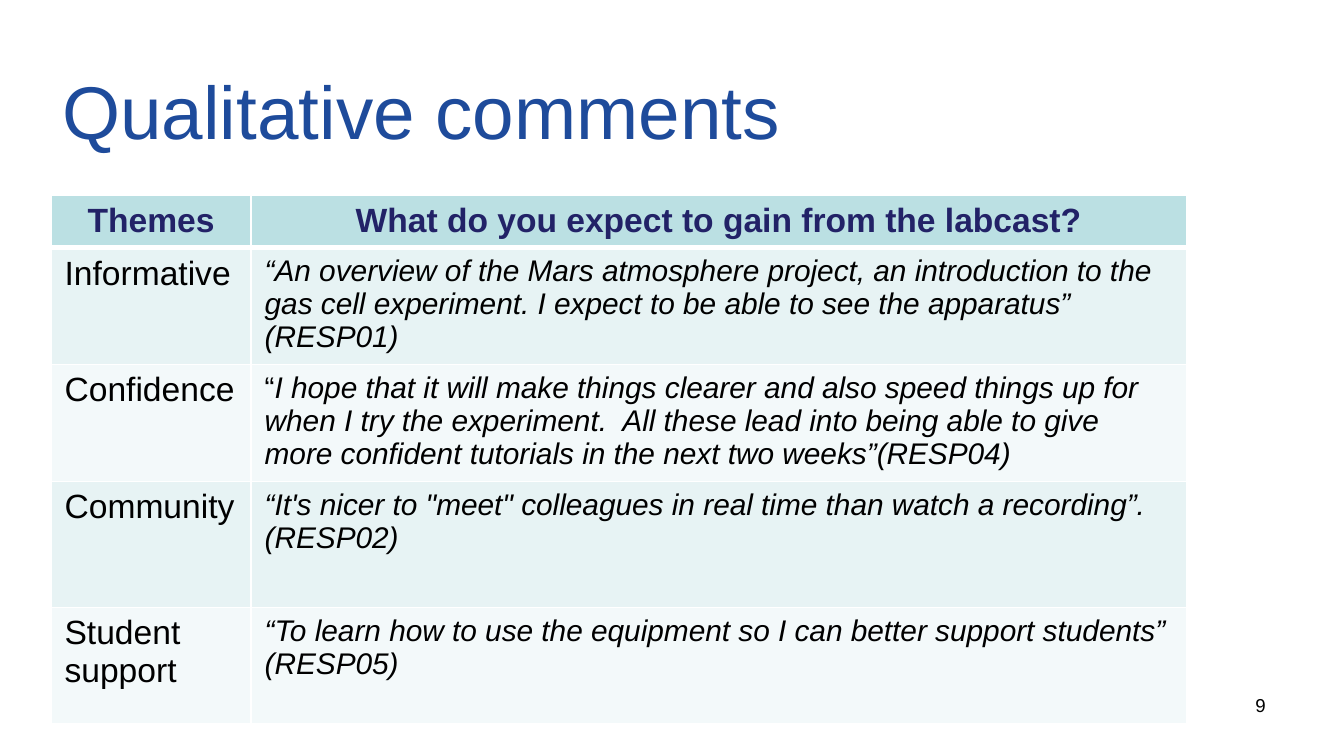
from lxml import etree
from pptx import Presentation
from pptx.dml.color import RGBColor
from pptx.enum import text
from pptx.oxml import ns
from pptx.util import Pt

COLORS = {
    "title": "1E4B9B", "heading": "222267", "body": "000000", "border": "FFFFFF",
    "header_fill": "BBE0E3", "odd_fill": "E7F3F4", "even_fill": "F3F9FA",
}
FORMATS = {
    "title": {"size": Pt(40), "bold": False},
    "heading": {"size": Pt(18), "bold": True},
    "theme": {"size": Pt(18), "bold": False},
    "quote": {"size": Pt(16), "bold": False, "italic": True},
    "opening": {"size": Pt(16), "bold": False, "italic": False},
    "number": {"size": Pt(10)},
}
MARGINS = {"margin_left": Pt(6), "margin_right": Pt(6),
           "margin_top": Pt(3), "margin_bottom": Pt(3), "word_wrap": True}

HEADINGS = ["Themes", "What do you expect to gain from the labcast?"]
COMMENTS = [
    ("Informative", "“An overview of the Mars atmosphere project, an introduction to the gas "
     "cell experiment. I expect to be able to see the apparatus” (RESP01)"),
    ("Confidence", "“I hope that it will make things clearer and also speed things up for when "
     "I try the experiment.  All these lead into being able to give more confident tutorials "
     "in the next two weeks”(RESP04)"),
    ("Community", "“It's nicer to \"meet\" colleagues in real time than watch a recording”. "
     "(RESP02)"),
    ("Student support", "“To learn how to use the equipment so I can better support students” "
     "(RESP05)"),
]
COLUMN_WIDTHS = [107.2, 501]
ROW_HEIGHTS = [28, 62.6, 62.6, 67.6, 62]


def add_run(paragraph, content, style, color):
    run = paragraph.add_run()
    run.text = content
    run.font.name = "Arial"
    run.font.color.rgb = RGBColor.from_string(COLORS[color])
    for name, value in FORMATS[style].items():
        setattr(run.font, name, value)


def set_borders(cell, widths):
    """Draw the left, right, top and bottom borders, with widths in points."""
    properties = cell._tc.get_or_add_tcPr()
    for index, (side, width) in enumerate(zip("LRTB", widths)):
        line = etree.Element(ns.qn(f"a:ln{side}"), w=str(Pt(width)))
        fill = etree.SubElement(line, ns.qn("a:solidFill"))
        etree.SubElement(fill, ns.qn("a:srgbClr"), val=COLORS["border"])
        properties.insert(index, line)


presentation = Presentation()
presentation.slide_width = Pt(720)
presentation.slide_height = Pt(405)
slide = presentation.slides.add_slide(presentation.slide_layouts[5])

# Title
title = slide.shapes.title
title.left, title.top, title.width, title.height = Pt(27.4), Pt(31.7), Pt(648), Pt(54)
for name, value in MARGINS.items():
    setattr(title.text_frame, name, value)
title.text_frame.vertical_anchor = text.MSO_ANCHOR.MIDDLE
paragraph = title.text_frame.paragraphs[0]
paragraph.alignment = text.PP_ALIGN.LEFT
add_run(paragraph, "Qualitative comments", "title", "title")

# Table of themes and comments
table = slide.shapes.add_table(
    len(ROW_HEIGHTS), len(COLUMN_WIDTHS), Pt(27.4), Pt(104.8),
    Pt(sum(COLUMN_WIDTHS)), Pt(sum(ROW_HEIGHTS))).table
for column, width in zip(table.columns, COLUMN_WIDTHS):
    column.width = Pt(width)
for row, height in zip(table.rows, ROW_HEIGHTS):
    row.height = Pt(height)

for row_index, contents in enumerate([HEADINGS, *COMMENTS]):
    is_header = row_index == 0
    fill = "header_fill" if is_header else "odd_fill" if row_index % 2 else "even_fill"
    for column_index, content in enumerate(contents):
        cell = table.cell(row_index, column_index)
        cell.fill.solid()
        cell.fill.fore_color.rgb = RGBColor.from_string(COLORS[fill])
        set_borders(cell, [1, 1, 3 if row_index == 1 else 1, 3 if is_header else 1])
        paragraph = cell.text_frame.paragraphs[0]
        if is_header:
            paragraph.alignment = text.PP_ALIGN.CENTER
            add_run(paragraph, content, "heading", "heading")
        elif column_index == 0:
            add_run(paragraph, content, "theme", "body")
        elif contents[0] == "Confidence":
            add_run(paragraph, content[0], "opening", "body")
            add_run(paragraph, content[1:], "quote", "body")
        else:
            add_run(paragraph, content, "quote", "body")

# Slide number
number = slide.shapes.add_textbox(Pt(515.5), Pt(368.8), Pt(168.5), Pt(28))
for name, value in MARGINS.items():
    setattr(number.text_frame, name, value)
paragraph = number.text_frame.paragraphs[0]
paragraph.alignment = text.PP_ALIGN.RIGHT
add_run(paragraph, "9", "number", "body")

presentation.save("out.pptx")
